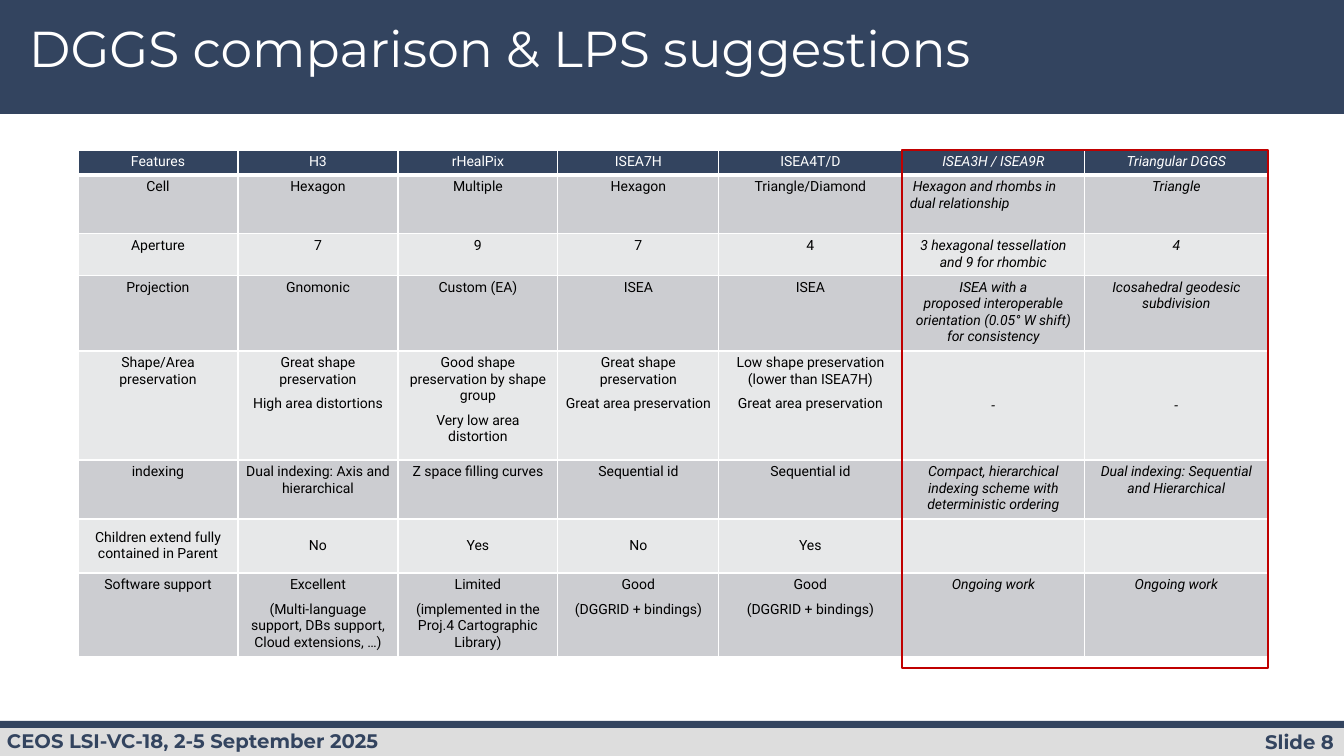
from lxml import etree
from pptx import Presentation
from pptx.dml.color import RGBColor
from pptx.enum.shapes import MSO_SHAPE
from pptx.enum.text import MSO_ANCHOR, PP_ALIGN
from pptx.oxml.ns import qn
from pptx.util import Pt

RECTANGLE = MSO_SHAPE.RECTANGLE
TOP, MIDDLE = MSO_ANCHOR.TOP, MSO_ANCHOR.MIDDLE
LEFT, CENTER, RIGHT = PP_ALIGN.LEFT, PP_ALIGN.CENTER, PP_ALIGN.RIGHT

EMU_PER_PX = 914400 / 100.8
SLIDE_W, SLIDE_H = 1344, 756
COLORS = {
    "navy": "33445F",
    "footer": "DDDDDD",
    "dark_band": "CCCDD1",
    "light_band": "E7E8E9",
    "white": "FFFFFF",
    "black": "000000",
    "highlight": "C00000",
}
HEADING_FONT, TABLE_FONT = "Montserrat", "Roboto"
NBSP = chr(160)

COLUMN_WIDTHS = [160, 160, 160, 161, 183, 183, 183]
ROW_HEIGHTS = [24, 59, 42, 75, 109, 59, 54, 84]
FIRST_SUGGESTION = 5
RHOMBS_CELL = (1, 5)
MIDDLE_CELLS = {(4, 5), (4, 6)} | {(6, column) for column in range(7)}
FEATURES = [
    ["Features", "H3", "rHealPix", "ISEA7H", "ISEA4T/D", "ISEA3H / ISEA9R", "Triangular DGGS"],
    ["Cell", "Hexagon", "Multiple", "Hexagon", "Triangle/Diamond",
     "Hexagon and rhombs in dual relationship", "Triangle"],
    ["Aperture", "7", "9", "7", "4", "3 hexagonal tessellation and 9 for rhombic", "4"],
    ["Projection", "Gnomonic", "Custom (EA)", "ISEA", "ISEA",
     f"ISEA with a proposed{NBSP}interoperable orientation (0.05° W shift) for consistency",
     "Icosahedral geodesic subdivision"],
    ["Shape/Area preservation",
     "Great shape preservation\nHigh area distortions",
     "Good shape preservation by shape group\nVery low area distortion",
     "Great shape preservation\nGreat area preservation",
     "Low shape preservation (lower than ISEA7H)\nGreat area preservation", "-", "-"],
    ["indexing", "Dual indexing: Axis and hierarchical", "Z space filling curves",
     "Sequential id", "Sequential id",
     "Compact, hierarchical indexing scheme with deterministic ordering",
     "Dual indexing: Sequential and Hierarchical"],
    ["Children extend fully contained in Parent", "No", "Yes", "No", "Yes", "", ""],
    ["Software support",
     "Excellent\n(Multi-language support, DBs support, Cloud extensions, …)",
     "Limited\n(implemented in the Proj.4 Cartographic Library)",
     "Good\n(DGGRID + bindings)", "Good\n(DGGRID + bindings)", "Ongoing work", "Ongoing work"],
]


def px(length):
    return round(length * EMU_PER_PX)


def color(name):
    return RGBColor.from_string(COLORS[name])


def set_font(paragraph, name, size, color_name, bold=False, italic=False):
    font = paragraph.font
    font.name, font.size = name, Pt(size)
    font.bold, font.italic = bold, italic
    font.color.rgb = color(color_name)


def add_bar(slide, box, color_name):
    bar = slide.shapes.add_shape(RECTANGLE, *map(px, box))
    bar.shadow.inherit = False
    bar.fill.solid()
    bar.fill.fore_color.rgb = color(color_name)
    bar.line.fill.background()


def add_label(slide, box, text, size, color_name, bold=False, align=LEFT, spacing=1.0):
    frame = slide.shapes.add_textbox(*map(px, box)).text_frame
    frame.word_wrap = True
    frame.vertical_anchor = TOP
    paragraph = frame.paragraphs[0]
    paragraph.text = text
    paragraph.alignment = align
    paragraph.line_spacing = spacing
    set_font(paragraph, HEADING_FONT, size, color_name, bold)


def add_header(slide, box):
    left, top, width, height = box
    add_bar(slide, box, "navy")
    add_label(slide, (left + 19, top + 19, 1035, height - 28),
              "DGGS comparison & LPS suggestions", 36, "white", spacing=0.9)


def add_footer(slide, box):
    left, top, width, height = box
    add_bar(slide, (left, top + 4, width, height - 4), "footer")
    add_bar(slide, (left, top, width, 7), "navy")
    add_label(slide, (left + width - 212, top + 4, 212, 34), "Slide 8", 14, "navy", True, RIGHT)
    add_label(slide, (left - 3, top + 3, 648, 34),
              "CEOS LSI-VC-18, 2-5 September 2025", 14, "navy", True)


def set_borders(cell, row):
    properties = cell._tc.get_or_add_tcPr()
    weights = {"lnL": 1, "lnR": 1, "lnT": 3 if row == 1 else 1, "lnB": 3 if row == 0 else 1}
    for position, (side, weight) in enumerate(weights.items()):
        border = etree.Element(qn(f"a:{side}"), w=str(Pt(weight)))
        fill = etree.SubElement(border, qn("a:solidFill"))
        etree.SubElement(fill, qn("a:srgbClr"), val=COLORS["white"])
        properties.insert(position, border)


def fill_cell(cell, row, column, text):
    cell.margin_left = cell.margin_right = px(8)
    cell.margin_top = cell.margin_bottom = px(4)
    cell.vertical_anchor = MIDDLE if (row, column) in MIDDLE_CELLS else TOP
    band = "navy" if row == 0 else "dark_band" if row % 2 else "light_band"
    cell.fill.solid()
    cell.fill.fore_color.rgb = color(band)
    set_borders(cell, row)
    cell.text = text
    for order, paragraph in enumerate(cell.text_frame.paragraphs):
        paragraph.alignment = CENTER
        if order:
            paragraph.space_before = Pt(6)
        set_font(paragraph, TABLE_FONT, 10, "white" if row == 0 else "black",
                 italic=column >= FIRST_SUGGESTION)
    if (row, column) == RHOMBS_CELL:
        paragraph.alignment = LEFT
        paragraph._p.get_or_add_pPr().set("indent", str(px(3)))


def add_comparison(slide, box):
    left, top, width, height = box
    table = slide.shapes.add_table(len(ROW_HEIGHTS), len(COLUMN_WIDTHS), *map(px, box)).table
    table.first_row = table.horz_banding = False
    for column, column_width in zip(table.columns, COLUMN_WIDTHS):
        column.width = px(column_width)
    for row, row_height in zip(table.rows, ROW_HEIGHTS):
        row.height = px(row_height)
    for row, texts in enumerate(FEATURES):
        for column, text in enumerate(texts):
            fill_cell(table.cell(row, column), row, column, text)

    suggestions_left = left + sum(COLUMN_WIDTHS[:FIRST_SUGGESTION])
    suggestions = slide.shapes.add_shape(
        RECTANGLE, px(suggestions_left), px(top), px(left + width - suggestions_left),
        px(height + 12))
    suggestions.shadow.inherit = False
    suggestions.fill.background()
    suggestions.line.color.rgb = color("highlight")
    suggestions.line.width = Pt(2)


def main():
    deck = Presentation()
    deck.slide_width, deck.slide_height = px(SLIDE_W), px(SLIDE_H)
    slide = deck.slides.add_slide(deck.slide_layouts[6])
    add_header(slide, (0, 0, SLIDE_W, 114))
    add_footer(slide, (0, 721, SLIDE_W, 35))
    add_comparison(slide, (78, 150, sum(COLUMN_WIDTHS), sum(ROW_HEIGHTS)))
    deck.save("out.pptx")


if __name__ == "__main__":
    main()
